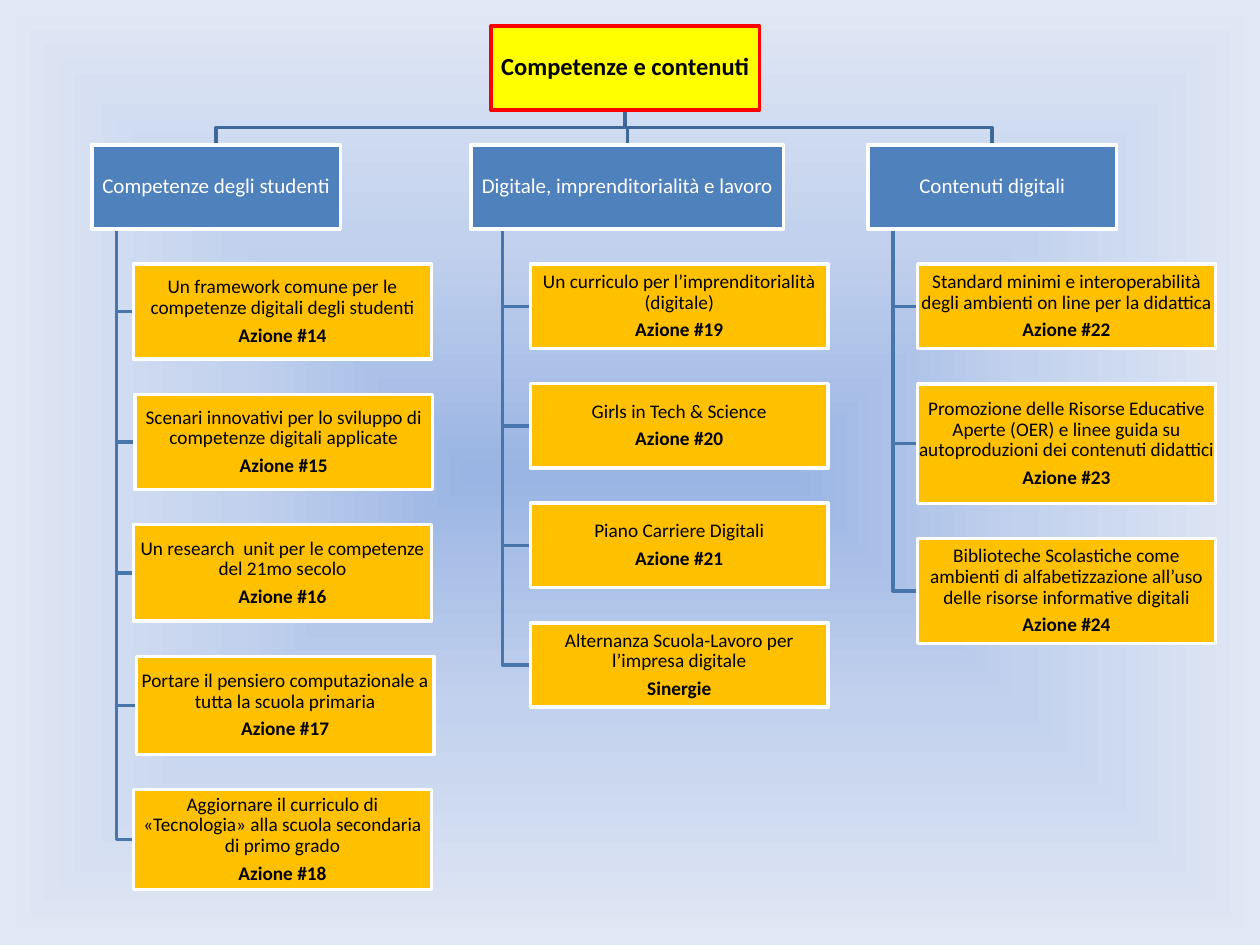
from pptx import Presentation
from pptx import util as u
from pptx.dml.color import RGBColor
from pptx.enum import shapes, text
from pptx.oxml import parse_xml
from pptx.oxml.ns import nsdecls, qn

Pt = u.Pt
BOX_HEIGHT, CARD_WIDTH, GAP = 48.2, 170.2, 20.1
HEADER_TOP, CARDS_TOP = 82.8, 151
ROOT = (280.6, 14.8, 153.4, BOX_HEIGHT)

# Header, left, width, left of the cards, cards (text, action, height, shift)
COLUMNS = [
    ("Competenze degli studenti", 52.5, 142, 76.4, [
        ("Un framework comune per le competenze digitali degli studenti",
         "Azione #14", 54.3, 0),
        ("Scenari innovativi per lo sviluppo di competenze digitali applicate",
         "Azione #15", 54.3, 0.7),
        ("Un research  unit per le competenze del 21mo secolo",
         "Azione #16", 55.2, 0),
        ("Portare il pensiero computazionale a tutta la scuola primaria",
         "Azione #17", 56, 1.5),
        ("Aggiornare il curriculo di «Tecnologia» alla scuola secondaria "
         "di primo grado", "Azione #18", 57, 0),
    ]),
    ("Digitale, imprenditorialità e lavoro", 269.2, 178.5, 303.1, [
        ("Un curriculo per l’imprenditorialità (digitale)",
         "Azione #19", BOX_HEIGHT, 0),
        ("Girls in Tech & Science", "Azione #20", BOX_HEIGHT, 0),
        ("Piano Carriere Digitali", "Azione #21", BOX_HEIGHT, 0),
        ("Alternanza Scuola-Lavoro per l’impresa digitale",
         "Sinergie", BOX_HEIGHT, 0),
    ]),
    ("Contenuti digitali", 496, 142, 524.4, [
        ("Standard minimi e interoperabilità degli ambienti on line "
         "per la didattica", "Azione #22", BOX_HEIGHT, 0),
        ("Promozione delle Risorse Educative Aperte (OER) e linee guida su "
         "autoproduzioni dei contenuti didattici", "Azione #23", 68.4, 0),
        ("Biblioteche Scolastiche come ambienti di alfabetizzazione all’uso "
         "delle risorse informative digitali", "Azione #24", 60, 0),
    ]),
]


def color(hex_string):
    return RGBColor.from_string(hex_string)


def write(paragraph, content, size=11, fill="000000", bold=False):
    paragraph.alignment = text.PP_ALIGN.CENTER
    paragraph.line_spacing = 0.9
    paragraph.space_after = Pt(0.35 * size)
    run = paragraph.add_run()
    run.text = content
    run.font.name = "Calibri"
    run.font.size = Pt(size)
    run.font.bold = bold
    run.font.color.rgb = color(fill)


class Chart:
    """Style and current slide of the organisation chart."""
    line_width = 2
    inset = 0.7
    bus_color, branch_color = "3F6797", "4875AC"

    def __init__(self, slide):
        self.slide = slide

    def background(self, stops):
        self.slide.background.fill.gradient()
        old = self.slide.element.find(".//" + qn("a:gradFill"))
        stop_xml = "".join(
            f'<a:gs pos="{position * 1000}"><a:srgbClr val="{value}"/></a:gs>'
            for position, value in stops)
        old.getparent().replace(old, parse_xml(
            f'<a:gradFill {nsdecls("a")} rotWithShape="1">'
            f'<a:gsLst>{stop_xml}</a:gsLst><a:path path="shape">'
            '<a:fillToRect l="50000" t="50000" r="50000" b="50000"/>'
            '</a:path></a:gradFill>'))

    def elbow(self, points, line):
        start, *rest = [(Pt(x), Pt(y)) for x, y in points]
        builder = self.slide.shapes.build_freeform(*start)
        builder.add_line_segments(rest, close=False)
        shape = builder.convert_to_shape()
        shape.shadow.inherit = False
        shape.fill.background()
        shape.line.color.rgb = color(line)
        shape.line.width = Pt(self.line_width)

    def box(self, bounds, fill, paragraphs, line="FFFFFF"):
        shape = self.slide.shapes.add_shape(
            shapes.MSO_SHAPE.RECTANGLE, *[Pt(value) for value in bounds])
        shape.shadow.inherit = False
        shape.fill.solid()
        shape.fill.fore_color.rgb = color(fill)
        shape.line.color.rgb = color(line)
        shape.line.width = Pt(self.line_width)
        frame = shape.text_frame
        frame.word_wrap = True
        frame.vertical_anchor = text.MSO_ANCHOR.MIDDLE
        frame.margin_left = frame.margin_right = Pt(self.inset)
        frame.margin_top = frame.margin_bottom = Pt(self.inset)
        for index, (content, style) in enumerate(paragraphs):
            paragraph = frame.add_paragraph() if index else frame.paragraphs[0]
            write(paragraph, content, **style)


def place_cards(left, cards):
    """Stack the cards with equal gaps; yield bounds, text and action."""
    top = CARDS_TOP
    for content, action, height, shift in cards:
        yield (left + shift, top, CARD_WIDTH, height), content, action
        top += height + GAP


def main():
    presentation = Presentation()
    presentation.slide_width, presentation.slide_height = Pt(720), Pt(540)
    slide = presentation.slides.add_slide(presentation.slide_layouts[6])
    chart = Chart(slide)
    chart.background([(0, "9AB5E4"), (50, "C2D1ED"), (100, "E1E8F5")])

    # Connecting lines, behind the boxes
    root_x, root_bottom = ROOT[0] + ROOT[2] / 2, ROOT[1] + ROOT[3]
    bus_y = (root_bottom + HEADER_TOP) / 2
    for _, left, width, card_left, cards in COLUMNS:
        center, trunk = left + width / 2, left + width / 10
        for (x, y, _, height), _, _ in place_cards(card_left, cards):
            middle = y + height / 2
            chart.elbow([(trunk, HEADER_TOP + BOX_HEIGHT), (trunk, middle),
                         (x, middle)], chart.branch_color)
        chart.elbow([(root_x, root_bottom), (root_x, bus_y),
                     (center, bus_y), (center, HEADER_TOP)], chart.bus_color)

    # Root box
    chart.box(ROOT, "FFFF00",
              [("Competenze e contenuti", dict(size=14, bold=True))],
              line="FF0000")

    # Headers and their cards
    for header, left, width, card_left, cards in COLUMNS:
        chart.box((left, HEADER_TOP, width, BOX_HEIGHT), "4F81BD",
                  [(header, dict(size=12, fill="FFFFFF"))])
        for bounds, content, action in place_cards(card_left, cards):
            chart.box(bounds, "FFC000",
                      [(content, {}), (action, dict(bold=True))])

    presentation.save("out.pptx")


if __name__ == "__main__":
    main()
